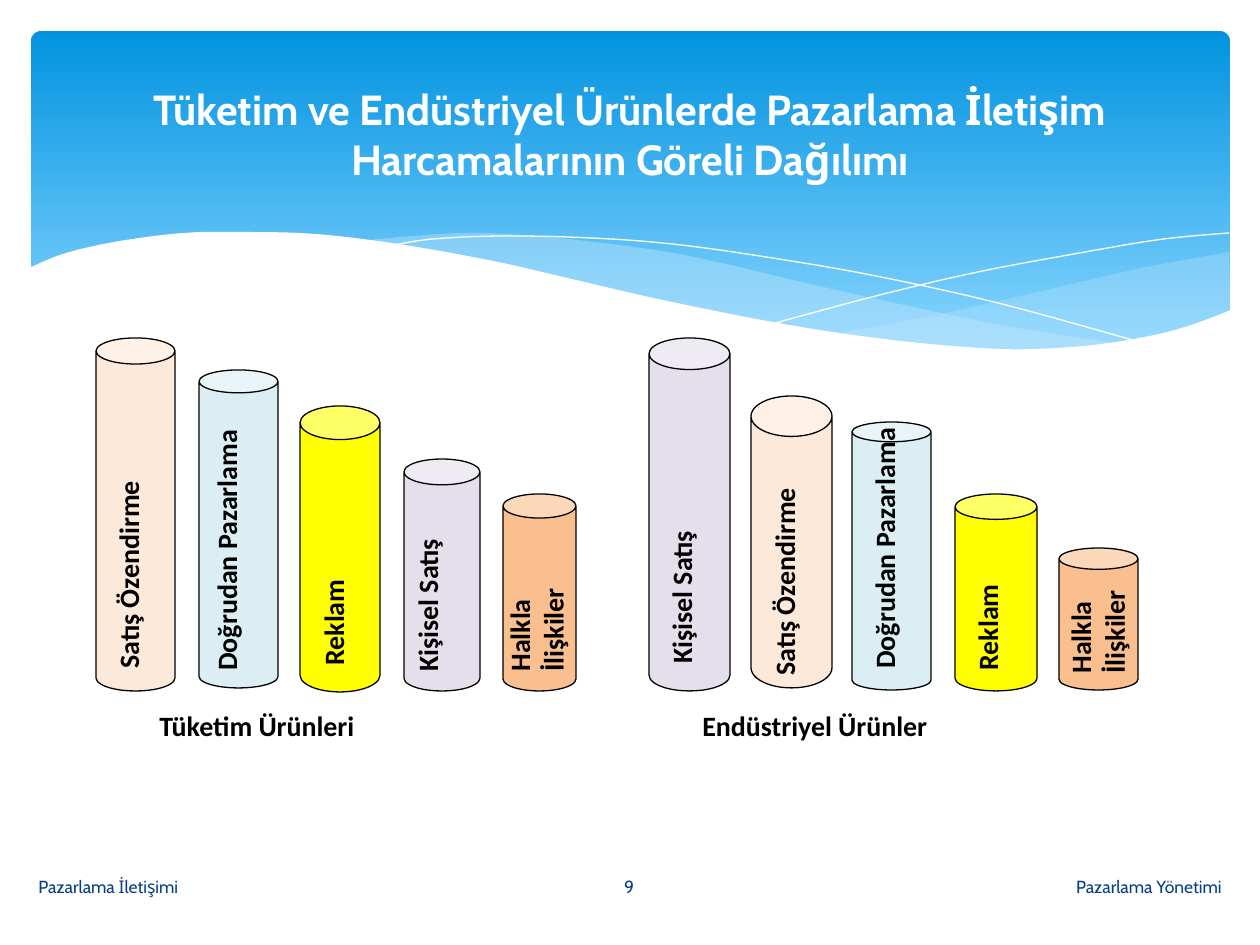
from lxml.etree import SubElement
from pptx import Presentation
from pptx.dml.color import RGBColor
from pptx.enum.shapes import MSO_SHAPE
from pptx.enum.text import MSO_ANCHOR, PP_ALIGN
from pptx.oxml.ns import qn
from pptx.util import Emu, Pt

EMU_PER_PX = 914400 / 126

CHANNEL_COLORS = {
    "Satış Özendirme": "FDE9D9",
    "Doğrudan Pazarlama": "DAEEF3",
    "Reklam": "FFFF00",
    "Kişisel Satış": "E5DFEC",
    "Halkla\nİlişkiler": "FABF8F",
}

# channel, can box, can lid ratio, label box
CONSUMER_BARS = [
    ("Satış Özendirme", (96, 338, 79, 353), 0.33, (105, 403, 58, 278)),
    ("Doğrudan Pazarlama", (199, 370, 79, 318), 0.29, (203, 415, 58, 268)),
    ("Reklam", (300, 406, 80, 286), 0.42, (310, 536, 64, 142)),
    ("Kişisel Satış", (404, 459, 76, 232), 0.34, (404, 491, 72, 193)),
    ("Halkla\nİlişkiler", (503, 494, 73, 197), 0.33, (496, 520, 87, 164)),
]
INDUSTRIAL_BARS = [
    ("Kişisel Satış", (649, 338, 81, 353), 0.39, (658, 483, 72, 193)),
    ("Satış Özendirme", (751, 396, 81, 292), 0.5, (761, 347, 58, 341)),
    ("Doğrudan Pazarlama", (852, 422, 79, 268), 0.25, (861, 413, 58, 268)),
    ("Reklam", (955, 494, 82, 197), 0.31, (955 + 9, 547, 64, 136)),
    ("Halkla\nİlişkiler", (1059, 548, 79, 142), 0.27, (1057, 522, 81, 164)),
]

RIGHT_WAVE_TOP = [(1229, 252), (1142, 268), (1085, 281), (982, 305), (890, 324), (833, 334)]
RIGHT_WAVE_BOTTOM = [(833, 334), (888, 341), (954, 348), (1026, 350), (1099, 345),
                     (1160, 334), (1196, 324), (1230, 311)]
MIDDLE_WAVE_TOP = [(360, 241), (413, 236), (479, 233), (557, 238), (648, 249), (717, 262),
                   (793, 280), (890, 302), (1017, 328), (1125, 344)]
MIDDLE_WAVE_BOTTOM = [(1125, 344), (1068, 349), (1017, 350), (942, 348), (857, 338),
                      (757, 321), (668, 302), (566, 280), (483, 261), (407, 247), (360, 241)]
FALLING_LINE = [(389, 246), (433, 239), (505, 236), (591, 238), (672, 244), (766, 257),
                (876, 276), (1002, 304), (1143, 343)]
RISING_LINE = [(772, 324), (876, 296), (978, 272), (1091, 251), (1164, 239), (1229, 233)]
WHITE_WAVE = [(29, 268), (66, 253), (120, 241), (184, 233), (243, 232), (315, 234),
              (398, 244), (493, 261), (563, 277), (667, 301), (789, 325), (892, 340),
              (980, 348), (1037, 349), (1102, 344), (1159, 334), (1197, 323), (1231, 310)]


def px(length):
    return Emu(round(length * EMU_PER_PX))


def color(value):
    return RGBColor.from_string(value)


def fill_solid(shape, value, alpha=None):
    shape.fill.solid()
    shape.fill.fore_color.rgb = color(value)
    if alpha is not None:
        rgb = shape.fill._xPr.find(qn("a:solidFill"))[0]
        SubElement(rgb, qn("a:alpha")).set("val", str(alpha * 1000))


def smooth(knots, steps=6):
    """Return points on a Catmull-Rom curve through the knots."""
    padded = [knots[0], *knots, knots[-1]]
    points = [knots[0]]
    for a, b, c, d in zip(padded, padded[1:], padded[2:], padded[3:]):
        for step in range(1, steps + 1):
            t = step / steps
            points.append(tuple(
                (2 * q + (r - p) * t + (2 * p - 5 * q + 4 * r - s) * t ** 2
                 + (3 * q - p - 3 * r + s) * t ** 3) / 2
                for p, q, r, s in zip(a, b, c, d)))
    return points


def add_outline(slide, points, close):
    emu_points = [(px(x), px(y)) for x, y in points]
    builder = slide.shapes.build_freeform(*emu_points[0], scale=1.0)
    builder.add_line_segments(emu_points[1:], close=close)
    shape = builder.convert_to_shape()
    shape.shadow.inherit = False
    return shape


def add_wave(slide, points, fill, alpha=None):
    shape = add_outline(slide, points, close=True)
    fill_solid(shape, fill, alpha)
    shape.line.fill.background()


def add_curve(slide, knots):
    shape = add_outline(slide, smooth(knots), close=False)
    shape.fill.background()
    shape.line.color.rgb = color("FFFFFF")
    shape.line.width = Pt(0)


def add_header(slide):
    panel = slide.shapes.add_shape(
        MSO_SHAPE.ROUNDED_RECTANGLE, px(31), px(31), px(1199), px(340))
    panel.adjustments[0] = 0.03
    panel.shadow.inherit = False
    panel.line.fill.background()
    panel.fill.gradient()
    panel.fill.gradient_angle = 270
    stops = panel.fill.gradient_stops
    for stop, position, value in zip(stops, (0, 0.9), ("0293E0", "83D3FE")):
        stop.position = position
        stop.color.rgb = color(value)
    add_wave(slide, smooth(RIGHT_WAVE_TOP) + smooth(RIGHT_WAVE_BOTTOM), "C6E7FC", 29)
    add_wave(slide, smooth(MIDDLE_WAVE_TOP) + smooth(MIDDLE_WAVE_BOTTOM), "C6E7FC", 40)
    add_curve(slide, FALLING_LINE)
    add_curve(slide, RISING_LINE)
    add_wave(slide, smooth(WHITE_WAVE) + [(1231, 415), (29, 415)], "FFFFFF")


def add_text(slide, text, box, size=16, font="Calibri", value="000000", bold=True,
             align=PP_ALIGN.LEFT, anchor=MSO_ANCHOR.TOP, upward=False):
    frame = slide.shapes.add_textbox(*map(px, box)).text_frame
    frame.word_wrap = True
    frame.vertical_anchor = anchor
    if upward:
        frame._txBody.bodyPr.set("vert", "vert270")
    frame.text = text
    for paragraph in frame.paragraphs:
        paragraph.alignment = align
        paragraph.font.size = Pt(size)
        paragraph.font.name = font
        paragraph.font.bold = bold
        paragraph.font.color.rgb = color(value)


def add_bar(slide, channel, can_box, lid, label_box):
    can = slide.shapes.add_shape(MSO_SHAPE.CAN, *map(px, can_box))
    can.adjustments[0] = lid
    can.shadow.inherit = False
    fill_solid(can, CHANNEL_COLORS[channel])
    can.line.color.rgb = color("000000")
    can.line.width = Pt(0.75)
    add_text(slide, channel, label_box, upward=True)


def add_footer(slide):
    for text, left, width, align in [
        ("Pazarlama Yönetimi", 712, 522, PP_ALIGN.RIGHT),
        ("Pazarlama İletişimi", 26, 522, PP_ALIGN.LEFT),
        ("9", 549, 160, PP_ALIGN.CENTER),
    ]:
        add_text(slide, text, (left, 862, width, 50), 10, "Cabin", "073E87", False,
                 align, MSO_ANCHOR.MIDDLE)


def main():
    presentation = Presentation()
    presentation.slide_width, presentation.slide_height = px(1260), px(945)
    slide = presentation.slides.add_slide(presentation.slide_layouts[6])
    add_header(slide)
    add_footer(slide)
    add_text(slide, "Tüketim ve Endüstriyel Ürünlerde Pazarlama İletişim "
             "Harcamalarının Göreli Dağılımı", (63, 47, 1134, 173), 24, "Cabin",
             "FFFFFF", True, PP_ALIGN.CENTER, MSO_ANCHOR.MIDDLE)
    for bar in CONSUMER_BARS + INDUSTRIAL_BARS:
        add_bar(slide, *bar)
    add_text(slide, "Tüketim Ürünleri", (147, 702, 370, 44))
    add_text(slide, "Endüstriyel Ürünler", (690, 702, 475, 44))
    presentation.save("out.pptx")


if __name__ == "__main__":
    main()
